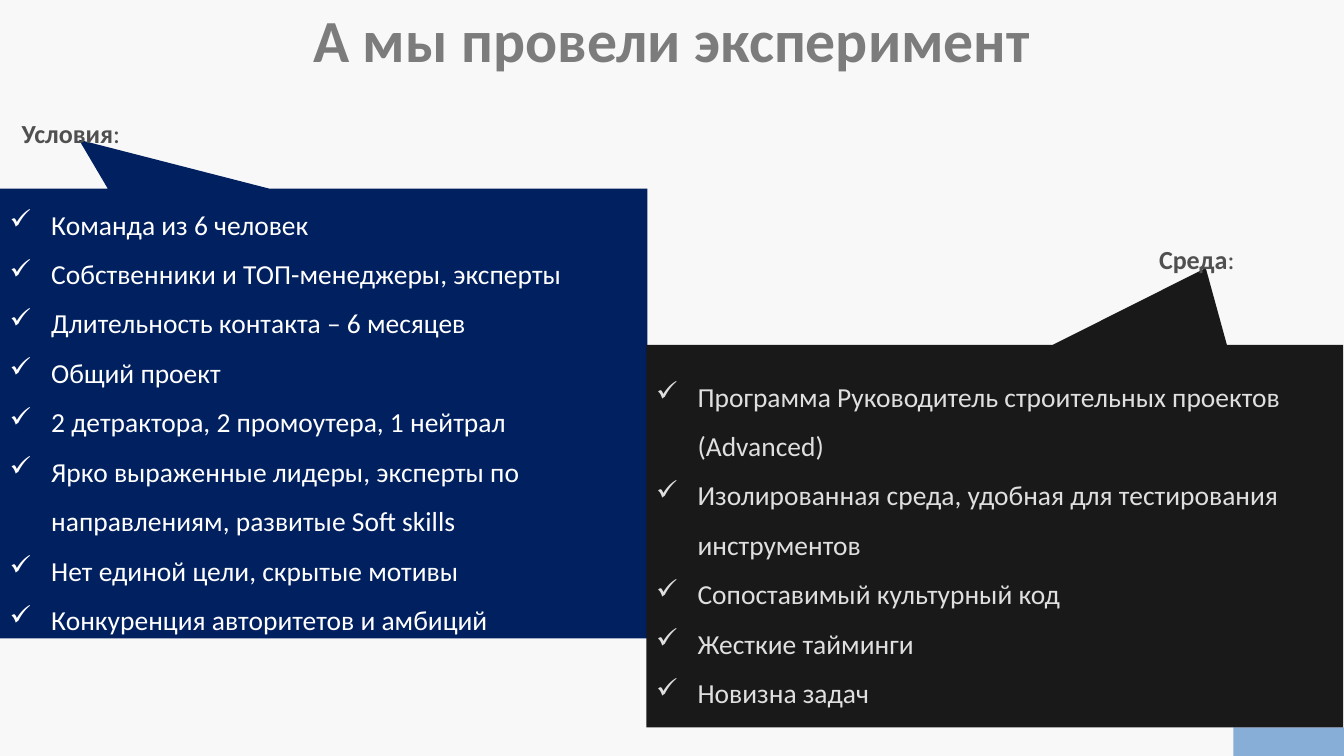
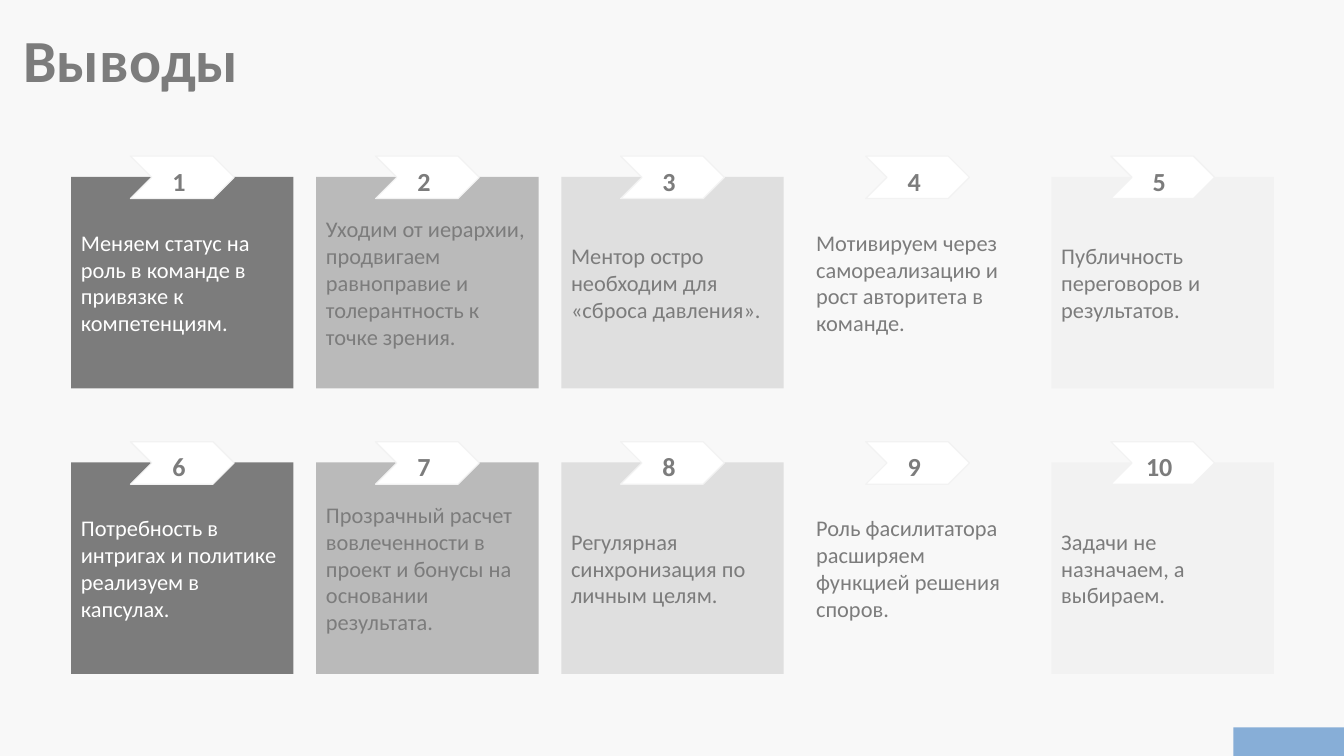
from dataclasses import dataclass

from lxml.etree import SubElement
from pptx import Presentation
from pptx.dml.color import RGBColor
from pptx.enum.shapes import MSO_SHAPE
from pptx.enum.text import MSO_ANCHOR, PP_ALIGN
from pptx.oxml.ns import qn
from pptx.util import Inches, Pt


@dataclass(frozen=True)
class Theme:
    font: str = "Calibri"
    background: RGBColor = RGBColor.from_string("F8F8F8")
    gray: RGBColor = RGBColor.from_string("7C7C7C")
    label: RGBColor = RGBColor.from_string("505050")
    navy: RGBColor = RGBColor.from_string("002060")
    black: RGBColor = RGBColor.from_string("191919")
    white: RGBColor = RGBColor.from_string("FFFFFF")
    silver: RGBColor = RGBColor.from_string("BABABA")
    pale: RGBColor = RGBColor.from_string("DFDFDF")
    mist: RGBColor = RGBColor.from_string("F2F2F2")
    accent: RGBColor = RGBColor.from_string("87AED7")
    title_size: Pt = Pt(43.5)
    label_size: Pt = Pt(19)
    list_size: Pt = Pt(20)
    card_size: Pt = Pt(16.3)


theme = Theme()
prs = Presentation()
prs.slide_width, prs.slide_height = Inches(13.6), Inches(7.65)
prs.slide_master.background.fill.solid()
prs.slide_master.background.fill.fore_color.rgb = theme.background


def add_panel(slide, preset, box, color):
    """Add a flat, borderless shape with vertically centred, wrapped text."""
    panel = slide.shapes.add_shape(preset, *map(Inches, box))
    panel.shadow.inherit = False
    panel.fill.solid()
    panel.fill.fore_color.rgb = color
    panel.line.fill.background()
    panel.text_frame.word_wrap = True
    panel.text_frame.vertical_anchor = MSO_ANCHOR.MIDDLE
    return panel


def start_slide(title, left, top, alignment):
    """Add a slide with its title and the footer block."""
    slide = prs.slides.add_slide(prs.slide_layouts[6])
    heading = slide.shapes.add_textbox(Inches(left), Inches(top), Inches(13.3), Inches(0.83))
    heading.text_frame.word_wrap = True
    paragraph = heading.text_frame.paragraphs[0]
    paragraph.text = title
    paragraph.alignment = alignment
    paragraph.font.name, paragraph.font.size = theme.font, theme.title_size
    paragraph.font.bold, paragraph.font.color.rgb = True, theme.gray
    add_panel(slide, MSO_SHAPE.RECTANGLE, (12.48, 7.36, 1.12, 0.32), theme.accent)
    return slide


# Experiment: conditions and environment
experiment = start_slide("А мы провели эксперимент", 0.15, -0.02, PP_ALIGN.CENTER)
callouts = [
    ("Условия", (0.12, 0.98, 5.57, 0.53), (0, 1.91, 6.55, 4.55), (-0.378, -0.609),
     theme.navy, theme.white, [
         "Команда из 6 человек",
         "Собственники и ТОП-менеджеры, эксперты",
         "Длительность контакта – 6 месяцев",
         "Общий проект",
         "2 детрактора, 2 промоутера, 1 нейтрал",
         "Ярко выраженные лидеры, эксперты по направлениям, развитые Soft skills",
         "Нет единой цели, скрытые мотивы",
         "Конкуренция авторитетов и амбиций",
     ]),
    ("Среда", (11.63, 2.26, 1.22, 0.53), (6.54, 3.49, 7.05, 3.87), (0.303, -0.701),
     theme.black, theme.pale, [
         "Программа Руководитель строительных проектов (Advanced)",
         "Изолированная среда, удобная для тестирования инструментов",
         "Сопоставимый культурный код",
         "Жесткие тайминги",
         "Новизна задач",
     ]),
]
for name, label_box, callout_box, tip, fill_color, text_color, points in callouts:
    callout = add_panel(experiment, MSO_SHAPE.RECTANGULAR_CALLOUT, callout_box, fill_color)
    callout.adjustments[0], callout.adjustments[1] = tip
    callout.text_frame.text = "\n".join(points)
    for paragraph in callout.text_frame.paragraphs:
        paragraph.alignment = PP_ALIGN.LEFT
        paragraph.line_spacing = 1.5
        paragraph.font.name, paragraph.font.size = theme.font, theme.list_size
        paragraph.font.color.rgb = text_color
        properties = paragraph._p.get_or_add_pPr()
        properties.set("marL", str(Inches(0.42)))
        properties.set("indent", str(-Inches(0.42)))
        bullet = SubElement(properties, qn("a:buChar"))
        bullet.set("char", "✓")
        # Bullet properties must precede the default run properties
        default_font = properties.find(qn("a:defRPr"))
        if default_font is not None:
            default_font.addprevious(bullet)

    label = experiment.shapes.add_textbox(*map(Inches, label_box))
    label.text_frame.word_wrap = True
    paragraph = label.text_frame.paragraphs[0]
    paragraph.line_spacing = 1.5
    paragraph.font.name, paragraph.font.size = theme.font, theme.label_size
    paragraph.font.color.rgb = theme.label
    for text, bold in ((name, True), (":", False)):
        run = paragraph.add_run()
        run.text, run.font.bold = text, bold

# Conclusions: two rows of five numbered cards
conclusions = start_slide("Выводы", 0.14, 0.18, PP_ALIGN.LEFT)
column_styles = [
    (theme.gray, theme.white),
    (theme.silver, theme.gray),
    (theme.pale, theme.gray),
    (theme.background, theme.gray),
    (theme.mist, theme.gray),
]
findings = [
    "Меняем статус на роль в команде в привязке к компетенциям.",
    "Уходим от иерархии, продвигаем равноправие и толерантность к точке зрения.",
    "Ментор остро необходим для «сброса давления».",
    "Мотивируем через самореализацию и рост авторитета в команде.",
    "Публичность переговоров и результатов.",
    "Потребность в интригах и политике реализуем в капсулах.",
    "Прозрачный расчет вовлеченности в проект и бонусы на основании результата.",
    "Регулярная синхронизация по личным целям.",
    "Роль фасилитатора расширяем функцией решения споров.",
    "Задачи не назначаем, а выбираем.",
]
for index, finding in enumerate(findings):
    row, column = divmod(index, len(column_styles))
    left, top = 0.72 + 2.48 * column, 1.79 + 2.89 * row
    fill_color, text_color = column_styles[column]

    card = add_panel(conclusions, MSO_SHAPE.RECTANGLE, (left, top, 2.25, 2.14), fill_color)
    paragraph = card.text_frame.paragraphs[0]
    paragraph.text = finding
    paragraph.alignment = PP_ALIGN.LEFT
    paragraph.font.name, paragraph.font.size = theme.font, theme.card_size
    paragraph.font.color.rgb = text_color

    marker = add_panel(conclusions, MSO_SHAPE.CHEVRON,
                       (left + 0.6, top - 0.21, 1.05, 0.43), theme.white)
    marker.line.color.rgb, marker.line.width = theme.mist, Pt(0.85)
    frame = marker.text_frame
    frame.margin_left = frame.margin_bottom = 0
    frame.margin_top = frame.margin_right = Inches(0.07)
    paragraph = frame.paragraphs[0]
    paragraph.text = str(index + 1)
    paragraph.alignment = PP_ALIGN.CENTER
    paragraph.font.name, paragraph.font.size = theme.font, theme.label_size
    paragraph.font.bold, paragraph.font.color.rgb = True, theme.gray

prs.save("out.pptx")
